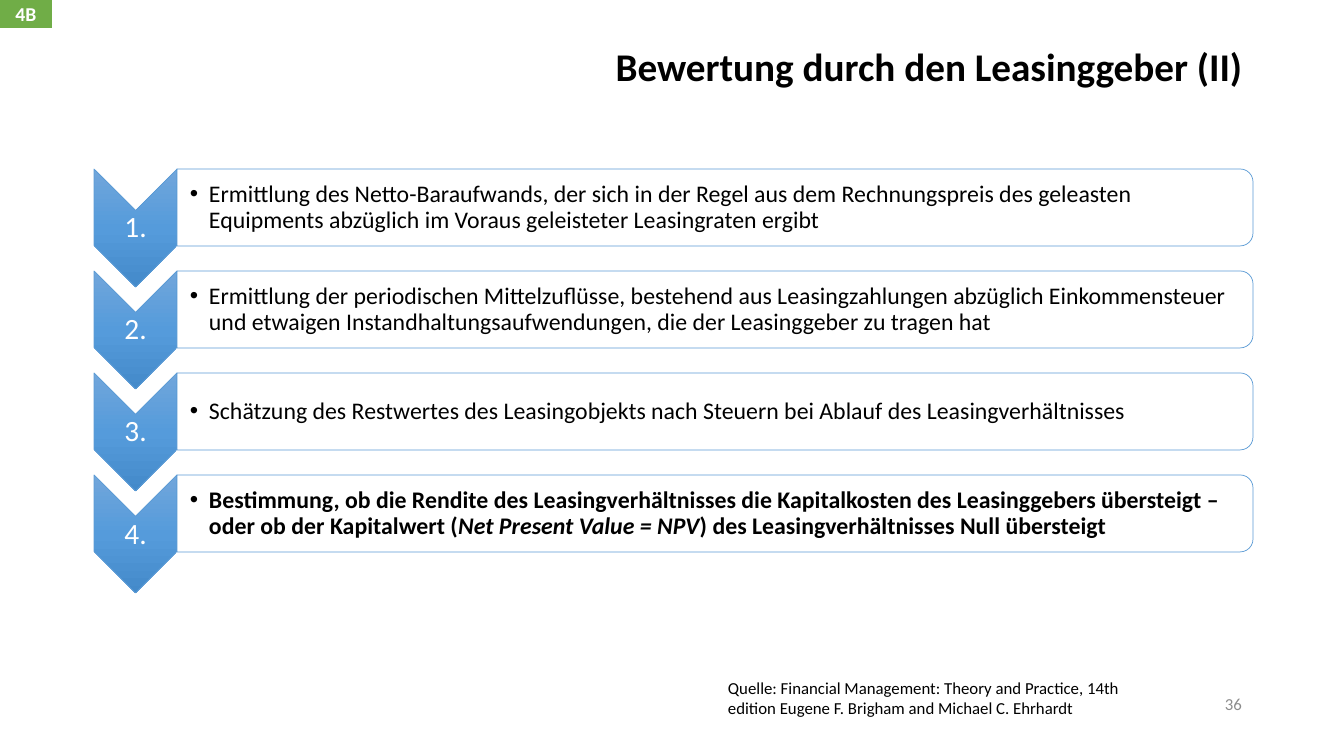
from lxml import etree
from pptx import Presentation
from pptx.dml.color import RGBColor
from pptx.enum.shapes import MSO_SHAPE
from pptx.enum.text import MSO_ANCHOR, PP_ALIGN
from pptx.oxml import parse_xml
from pptx.oxml.ns import nsdecls, qn
from pptx.util import Emu, Pt

CHEVRON, RECTANGLE = MSO_SHAPE.CHEVRON, MSO_SHAPE.RECTANGLE
PANEL = MSO_SHAPE.ROUND_2_SAME_RECTANGLE
LEFT, CENTER, RIGHT = PP_ALIGN.LEFT, PP_ALIGN.CENTER, PP_ALIGN.RIGHT
TOP, MIDDLE = MSO_ANCHOR.TOP, MSO_ANCHOR.MIDDLE

TITLE = "Bewertung durch den Leasinggeber (II)"
TAG = "4B"
PAGE_NUMBER = "36"
SOURCE = ("Quelle: Financial Management: Theory and Practice, 14th edition "
          "Eugene F. Brigham and Michael C. Ehrhardt")
PLAIN, BOLD, BOLD_ITALIC = {}, {"bold": True}, {"bold": True, "italic": True}
STEPS = [
    [("Ermittlung des Netto-Baraufwands, der sich in der Regel aus dem Rechnungspreis "
      "des geleasten Equipments abzüglich im Voraus geleisteter Leasingraten ergibt", PLAIN)],
    [("Ermittlung der periodischen Mittelzuflüsse, bestehend aus Leasingzahlungen "
      "abzüglich Einkommensteuer und etwaigen Instandhaltungsaufwendungen, "
      "die der Leasinggeber zu tragen hat", PLAIN)],
    [("Schätzung des Restwertes des Leasingobjekts nach Steuern bei Ablauf "
      "des Leasingverhältnisses", PLAIN)],
    [("Bestimmung, ob die Rendite des Leasingverhältnisses die Kapitalkosten des "
      "Leasinggebers übersteigt – oder ob der Kapitalwert (", BOLD),
     ("Net Present Value = NPV", BOLD_ITALIC),
     (") des Leasingverhältnisses Null übersteigt", BOLD)],
]

FONT = "Calibri"
BLACK, WHITE, GRAY = "000000", "FFFFFF", "8C8C8C"
BLUE, GREEN = "5B9BD5", "70AD47"
GRADIENT = [(0, "71A6DB"), (50, "559BDB"), (100, "448ACA")]
PANEL_OPACITY = 90

# Lengths in px
SLIDE_W, SLIDE_H = 1344, 756
STEPS_LEFT, STEPS_TOP, STEP_PITCH = 94, 169, 102
CHEVRON_W, CHEVRON_H = 83, 118
PANEL_W, PANEL_H = 1076, 77
NUMBER_DROP, NUMBER_H = 42, 35
BODY_DROP, BODY_W, BODY_H = 4, 1073, 69
BULLET_INDENT = 19
DEFAULT_INSETS = (10, 5, 10, 5)


def px(length):
    return Emu(round(length * 914400 / 100.8))


def rgb(color):
    return RGBColor.from_string(color)


def write(shape, runs, size, color=BLACK, align=LEFT, anchor=MIDDLE,
          insets=DEFAULT_INSETS, spacing=1.0, bullet=False):
    frame = shape.text_frame
    left, top, right, bottom = map(px, insets)
    layout = {"word_wrap": True, "vertical_anchor": anchor, "margin_left": left,
              "margin_top": top, "margin_right": right, "margin_bottom": bottom}
    for name, value in layout.items():
        setattr(frame, name, value)
    paragraph = frame.paragraphs[0]
    paragraph.alignment, paragraph.line_spacing = align, spacing
    if bullet:
        properties = paragraph._p.get_or_add_pPr()
        properties.set("marL", str(px(BULLET_INDENT)))
        properties.set("indent", str(-px(BULLET_INDENT)))
        etree.SubElement(properties, qn("a:buFont")).set("typeface", "Arial")
        etree.SubElement(properties, qn("a:buChar")).set("char", "•")
    for text, style in runs:
        run = paragraph.add_run()
        run.text = text
        for name, value in {"name": FONT, "size": Pt(size), **style}.items():
            setattr(run.font, name, value)
        run.font.color.rgb = rgb(color)


def add_text(slide, box, runs, size, **layout):
    write(slide.shapes.add_textbox(*map(px, box)), runs, size, **layout)


def add_turned(slide, preset, left, top, width, height):
    """Add a shape turned by 90 degrees that covers the given upright box."""
    shift = (width - height) / 2
    shape = slide.shapes.add_shape(
        preset, *map(px, (left + shift, top - shift, height, width)))
    shape.rotation = 90
    shape.shadow.inherit = False
    shape.line.color.rgb = rgb(BLUE)
    shape.line.width = Pt(0.5)
    shape.fill.solid()
    shape.fill.fore_color.rgb = rgb(WHITE)
    return shape


def fill_gradient(shape):
    stops = "".join(f'<a:gs pos="{pos * 1000}"><a:srgbClr val="{color}"/></a:gs>'
                    for pos, color in GRADIENT)
    gradient = parse_xml(
        f'<a:gradFill {nsdecls("a")} rotWithShape="0"><a:gsLst>{stops}</a:gsLst>'
        '<a:lin ang="5400000" scaled="0"/></a:gradFill>')
    solid = shape._element.spPr.find(qn("a:solidFill"))
    solid.getparent().replace(solid, gradient)


def set_opacity(shape, percent):
    color = shape._element.spPr.find(qn("a:solidFill"))[0]
    etree.SubElement(color, qn("a:alpha")).set("val", str(percent * 1000))


def add_step(slide, index, runs):
    top = STEPS_TOP + index * STEP_PITCH
    panel_left = STEPS_LEFT + CHEVRON_W
    fill_gradient(add_turned(slide, CHEVRON, STEPS_LEFT, top, CHEVRON_W, CHEVRON_H))
    add_text(slide, (STEPS_LEFT, top + NUMBER_DROP, CHEVRON_W, NUMBER_H),
             [(f"{index + 1}.", PLAIN)], 21, color=WHITE, align=CENTER,
             insets=(1, 1, 1, 1), spacing=0.9)
    panel = add_turned(slide, PANEL, panel_left, top, PANEL_W, PANEL_H)
    set_opacity(panel, PANEL_OPACITY)
    add_text(slide, (panel_left, top + BODY_DROP, BODY_W, BODY_H), runs, 17,
             insets=(13, 1, 1, 1), spacing=0.9, bullet=True)


def add_tag(slide):
    tag = slide.shapes.add_shape(RECTANGLE, *map(px, (0, 0, 52, 28)))
    tag.shadow.inherit = False
    tag.fill.solid()
    tag.fill.fore_color.rgb = rgb(GREEN)
    tag.line.fill.background()
    write(tag, [(TAG, BOLD)], 14, color=WHITE, align=CENTER)


def main():
    deck = Presentation()
    deck.slide_width, deck.slide_height = px(SLIDE_W), px(SLIDE_H)
    slide = deck.slides.add_slide(deck.slide_layouts[6])
    add_text(slide, (93, 40, 1159, 58), [(TITLE, BOLD)], 28, align=RIGHT, spacing=0.9)
    for index, runs in enumerate(STEPS):
        add_step(slide, index, runs)
    add_tag(slide)
    add_text(slide, (950, 684, 302, 40), [(PAGE_NUMBER, PLAIN)], 12,
             color=GRAY, align=RIGHT)
    add_text(slide, (718, 673, 425, 51), [(SOURCE, PLAIN)], 12, anchor=TOP)
    deck.save("out.pptx")


if __name__ == "__main__":
    main()
